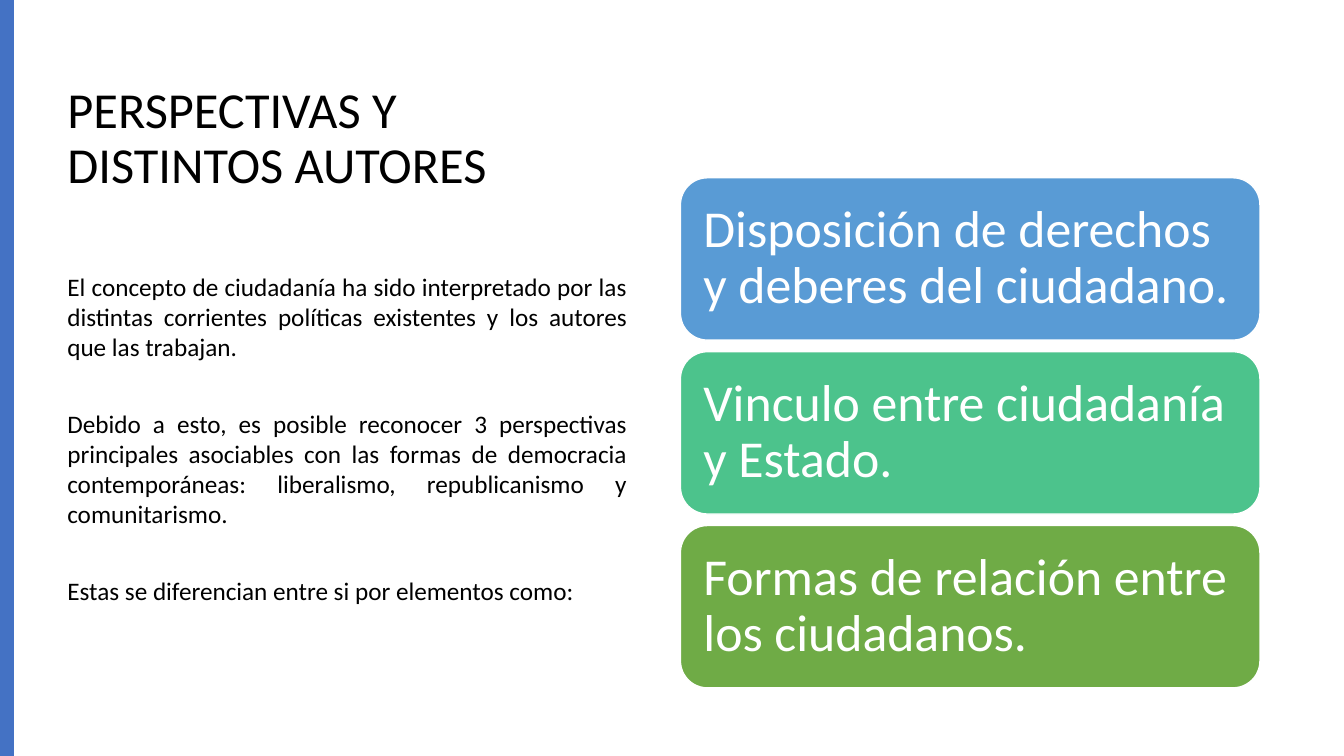
import pptx
import pptx.dml.color
import pptx.enum.shapes
import pptx.enum.text
import pptx.util

Pt = pptx.util.Pt
ALIGN = pptx.enum.text.PP_ALIGN
ANCHOR = pptx.enum.text.MSO_ANCHOR
SHAPE = pptx.enum.shapes.MSO_SHAPE

COLOURS = {
    "text": "000000",
    "white": "FFFFFF",
    "stripe": "4472C4",
    "rights": "599BD5",
    "bond": "4CC38C",
    "relations": "6FAB46",
}


def colour(name):
    return pptx.dml.color.RGBColor.from_string(COLOURS[name])


def format_text(box, size, colour_name, alignment, anchor, margins, spacing):
    """Style every paragraph; margins are (horizontal, vertical) in points."""
    frame = box.text_frame
    frame.word_wrap = True
    frame.auto_size = pptx.enum.text.MSO_AUTO_SIZE.NONE
    frame.vertical_anchor = anchor
    frame.margin_left = frame.margin_right = Pt(margins[0])
    frame.margin_top = frame.margin_bottom = Pt(margins[1])
    for para in frame.paragraphs:
        para.alignment = alignment
        para.line_spacing = spacing
        for span in para.runs:
            span.font.name = "Calibri"
            span.font.size = Pt(size)
            span.font.color.rgb = colour(colour_name)


deck = pptx.Presentation()
deck.slide_width, deck.slide_height = Pt(960), Pt(540)
page = deck.slides.add_slide(deck.slide_layouts[5])

# Title
title = page.shapes.title
title.left, title.top, title.width, title.height = Pt(41), Pt(49), Pt(408), Pt(101.5)
title.text_frame.text = "PERSPECTIVAS Y DISTINTOS AUTORES"
format_text(title, 36, "text", ALIGN.LEFT, ANCHOR.MIDDLE, (7.2, 3.6), 0.9)

# Stripe along the left edge
stripe = page.shapes.add_shape(SHAPE.RECTANGLE, 0, 0, Pt(10), Pt(540))
stripe.shadow.inherit = False
stripe.fill.solid()
stripe.fill.fore_color.rgb = colour("stripe")
stripe.line.fill.background()

# Column of differing elements; the rounded corners add to the text margins
elements = [
    ("rights", "Disposición de derechos y deberes del ciudadano."),
    ("bond", "Vinculo entre ciudadanía y Estado."),
    ("relations", "Formas de relación entre los ciudadanos."),
]
first_top, step = 127, 124.2
for index, (name, wording) in enumerate(elements):
    card = page.shapes.add_shape(
        SHAPE.ROUNDED_RECTANGLE, Pt(486), Pt(first_top + index * step), Pt(414), Pt(116)
    )
    card.shadow.inherit = False
    card.fill.solid()
    card.fill.fore_color.rgb = colour(name)
    card.line.color.rgb = colour("white")
    card.line.width = Pt(1)
    card.text_frame.text = wording
    format_text(card, 37, "white", ALIGN.LEFT, ANCHOR.MIDDLE, (10.8, 10.8), 0.9)

# Explanation
explanation = page.shapes.add_textbox(Pt(41), Pt(190), Pt(414), Pt(277))
explanation.text_frame.text = "\n".join([
    "El concepto de ciudadanía ha sido interpretado por las distintas corrientes "
    "políticas existentes y los autores que las trabajan.",
    "Debido a esto, es posible reconocer 3 perspectivas principales asociables con las "
    "formas de democracia contemporáneas: liberalismo, republicanismo y comunitarismo.",
    "Estas se diferencian entre si por elementos como:",
])
format_text(explanation, 18, "text", ALIGN.JUSTIFY, ANCHOR.TOP, (7.2, 3.6), 1.0)
for para in explanation.text_frame.paragraphs[1:]:
    para.space_before = Pt(33)

deck.save("out.pptx")
